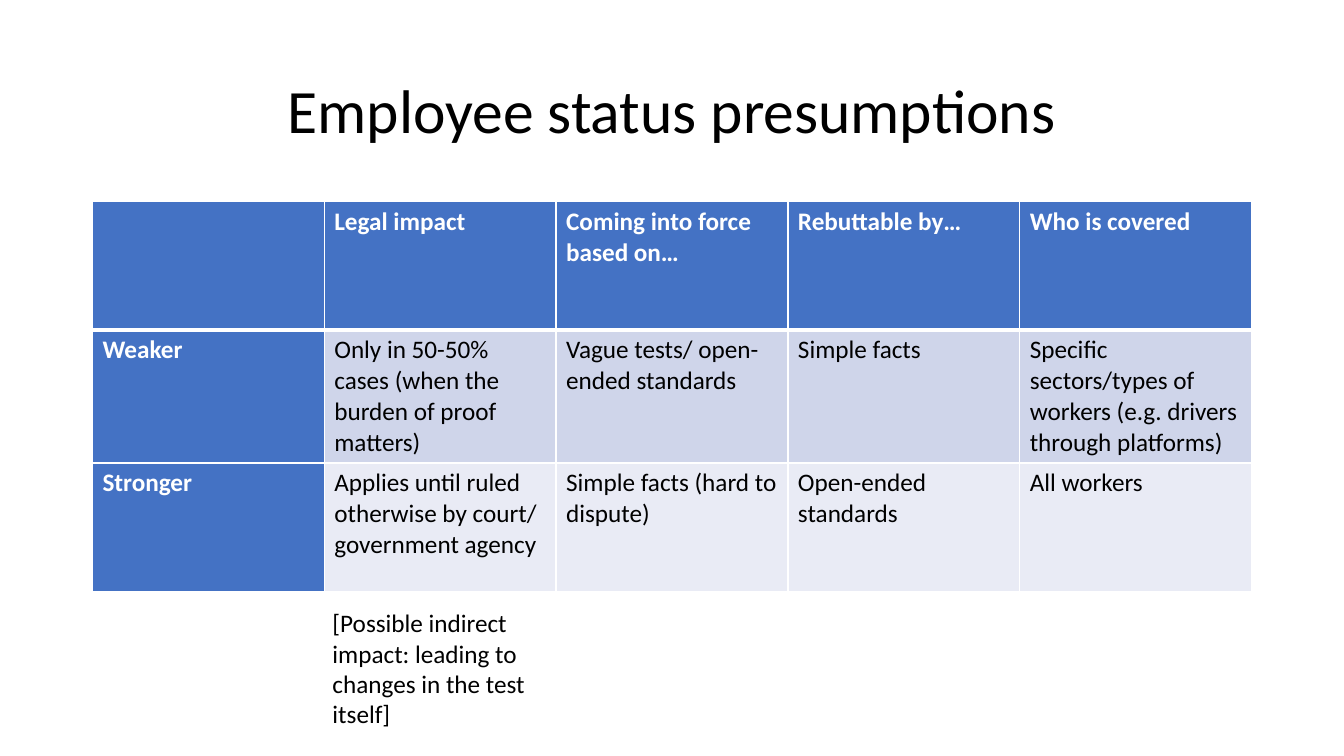
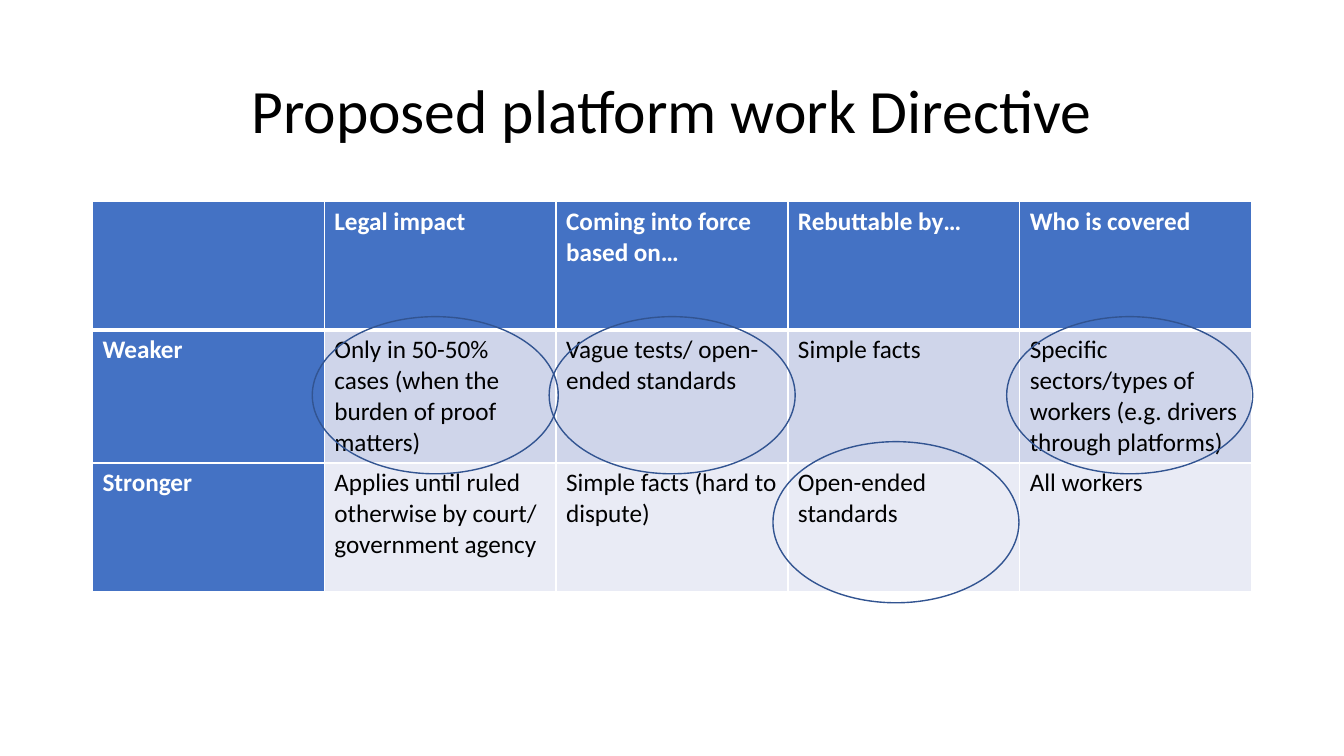
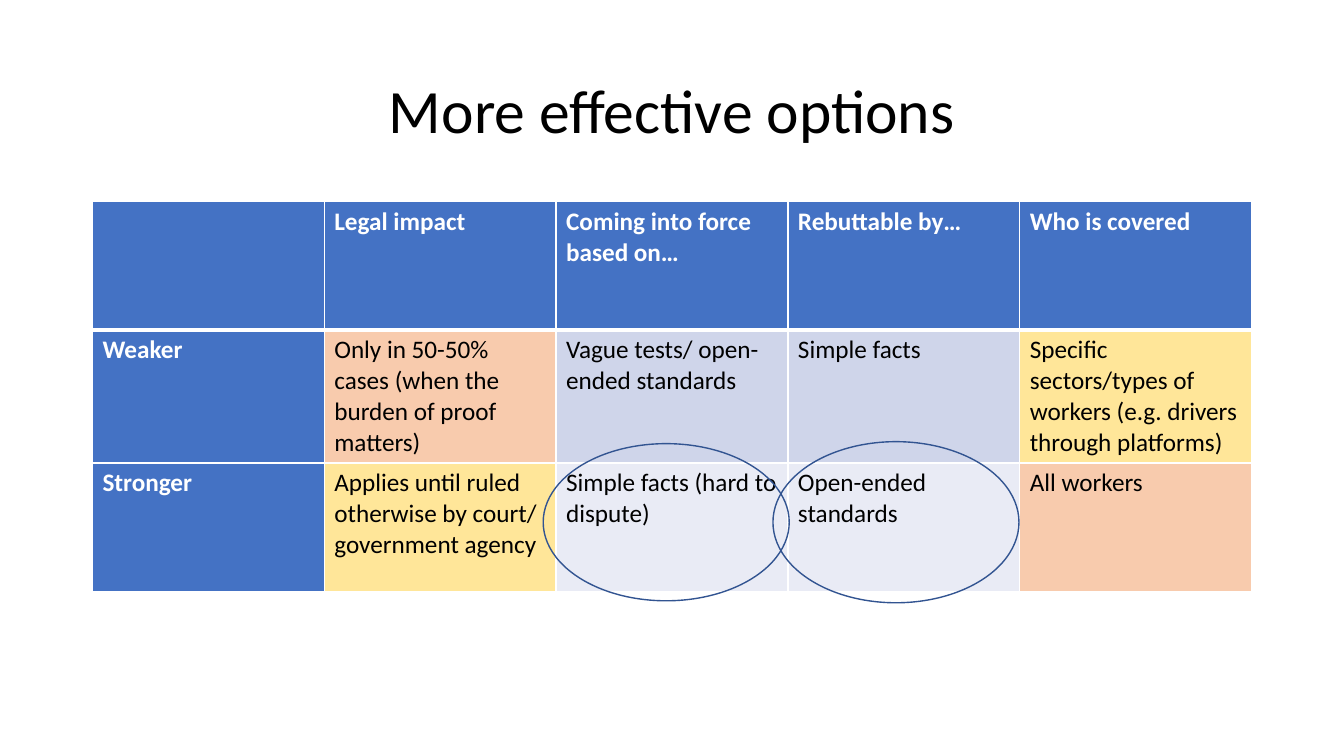
"""Build three slides comparing weaker and stronger employee status presumptions."""
from dataclasses import dataclass

from lxml.etree import SubElement
from pptx import Presentation
from pptx.dml.color import RGBColor as Rgb
from pptx.enum.shapes import MSO_SHAPE as Preset
from pptx.enum.text import MSO_ANCHOR as Anchor, MSO_AUTO_SIZE as AutoSize, PP_ALIGN as Align
from pptx.oxml.ns import qn
from pptx.util import Cm, Pt


@dataclass(frozen=True)
class Theme:
    """Colours, font and type sizes shared by all slides."""
    font: str = "Calibri"
    title_size: float = 44
    text_size: float = 18
    thin: float = 1
    thick: float = 3
    black: Rgb = Rgb.from_string("000000")
    white: Rgb = Rgb.from_string("FFFFFF")
    heading: Rgb = Rgb.from_string("4472C4")
    weaker: Rgb = Rgb.from_string("CFD5EA")
    stronger: Rgb = Rgb.from_string("E9EBF5")
    orange: Rgb = Rgb.from_string("F8CBAD")
    yellow: Rgb = Rgb.from_string("FFE699")
    ring: Rgb = Rgb.from_string("325491")


THEME = Theme()
MARGIN, CONTENT_WIDTH = 2.33, 29.21
TABLE_TOP, ROW_HEIGHT = 5.08, 3.23
RING_WIDTH = 6.2

COMPARISON = [
    ["", "Legal impact", "Coming into force based on…", "Rebuttable by…", "Who is covered"],
    ["Weaker", "Only in 50-50% cases (when the burden of proof matters)",
     "Vague tests/ open-ended standards", "Simple facts",
     "Specific sectors/types of workers (e.g. drivers through platforms)"],
    ["Stronger", "Applies until ruled otherwise by court/ government agency",
     "Simple facts (hard to dispute)", "Open-ended standards", "All workers"],
]
HIGHLIGHTS = {(1, 1): THEME.orange, (1, 4): THEME.yellow,
              (2, 1): THEME.yellow, (2, 4): THEME.orange}
INDIRECT_IMPACT = "[Possible indirect impact: leading to changes in the test itself]"

OPEN_STANDARDS_RING = (19.48, 11.13, 4.06)
DIRECTIVE_RINGS = [(7.87, 7.98, 3.96), (13.84, 7.98, 3.96),
                   OPEN_STANDARDS_RING, (25.37, 7.98, 3.96)]
EFFECTIVE_RINGS = [(13.69, 11.18, 3.96), OPEN_STANDARDS_RING]


def set_format(target, values):
    """Set each named attribute of the target."""
    for attribute, value in values.items():
        setattr(target, attribute, value)


def place(left, top, width, height):
    """Return a position and size as a dict of lengths given in centimetres."""
    return {"left": Cm(left), "top": Cm(top), "width": Cm(width), "height": Cm(height)}


def write(frame, wording, size=THEME.text_size, colour=THEME.black, bold=False):
    """Write one formatted paragraph and return it."""
    paragraph = frame.paragraphs[0]
    run = paragraph.add_run()
    run.text = wording
    set_format(run.font, {"name": THEME.font, "size": Pt(size), "bold": bold})
    run.font.color.rgb = colour
    return paragraph


def add_titled_slide(deck, wording):
    """Add a slide with a centred title."""
    slide = deck.slides.add_slide(deck.slide_layouts[5])
    title = slide.shapes.title
    set_format(title, place(MARGIN, 1.02, CONTENT_WIDTH, 3.68))
    title.text_frame.vertical_anchor = Anchor.MIDDLE
    heading = write(title.text_frame, wording, THEME.title_size)
    set_format(heading, {"alignment": Align.CENTER, "line_spacing": 0.9})
    return slide


def add_borders(cell, row):
    """Draw white cell borders, thicker between the header and the body."""
    properties = cell._tc.get_or_add_tcPr()
    widths = {"lnL": THEME.thin, "lnR": THEME.thin,
              "lnT": THEME.thick if row == 1 else THEME.thin,
              "lnB": THEME.thick if row == 0 else THEME.thin}
    for side, width in widths.items():
        border = SubElement(properties, qn(f"a:{side}"), w=str(Pt(width)))
        fill = SubElement(border, qn("a:solidFill"))
        SubElement(fill, qn("a:srgbClr"), val=str(THEME.white))


def add_comparison(slide, highlights):
    """Add the comparison table with some cells highlighted."""
    row_count, column_count = len(COMPARISON), len(COMPARISON[0])
    bounds = place(MARGIN, TABLE_TOP, CONTENT_WIDTH, ROW_HEIGHT * row_count)
    table = slide.shapes.add_table(row_count, column_count, **bounds).table
    set_format(table, {"first_row": True, "first_col": True, "horz_banding": True})
    row_fills = [THEME.heading, THEME.weaker, THEME.stronger]
    for row, wordings in enumerate(COMPARISON):
        for column, wording in enumerate(wordings):
            cell = table.cell(row, column)
            is_heading = row == 0 or column == 0
            add_borders(cell, row)
            cell.fill.solid()
            base = THEME.heading if is_heading else row_fills[row]
            cell.fill.fore_color.rgb = highlights.get((row, column), base)
            if wording:
                write(cell.text_frame, wording, bold=is_heading,
                      colour=THEME.white if is_heading else THEME.black)


def add_rings(slide, rings):
    """Circle the chosen cells with outlined ellipses."""
    for left, top, height in rings:
        ring = slide.shapes.add_shape(Preset.OVAL, **place(left, top, RING_WIDTH, height))
        ring.shadow.inherit = False
        ring.fill.background()
        ring.line.color.rgb = THEME.ring
        ring.line.width = Pt(THEME.thin)


def add_note(slide, wording):
    """Add a remark below the legal impact column."""
    note = slide.shapes.add_textbox(**place(8.13, 15.19, 5.92, 3.33)).text_frame
    set_format(note, {"word_wrap": True, "auto_size": AutoSize.SHAPE_TO_FIT_TEXT})
    write(note, wording)


def main():
    """Build and save the presentation."""
    deck = Presentation()
    set_format(deck, {"slide_width": Cm(33.87), "slide_height": Cm(19.05)})
    pages = [
        ("Employee status presumptions", {}, [], INDIRECT_IMPACT),
        ("Proposed platform work Directive", {}, DIRECTIVE_RINGS, None),
        ("More effective options", HIGHLIGHTS, EFFECTIVE_RINGS, None),
    ]
    for title, highlights, rings, remark in pages:
        slide = add_titled_slide(deck, title)
        add_comparison(slide, highlights)
        add_rings(slide, rings)
        if remark:
            add_note(slide, remark)
    deck.save("out.pptx")


if __name__ == "__main__":
    main()
